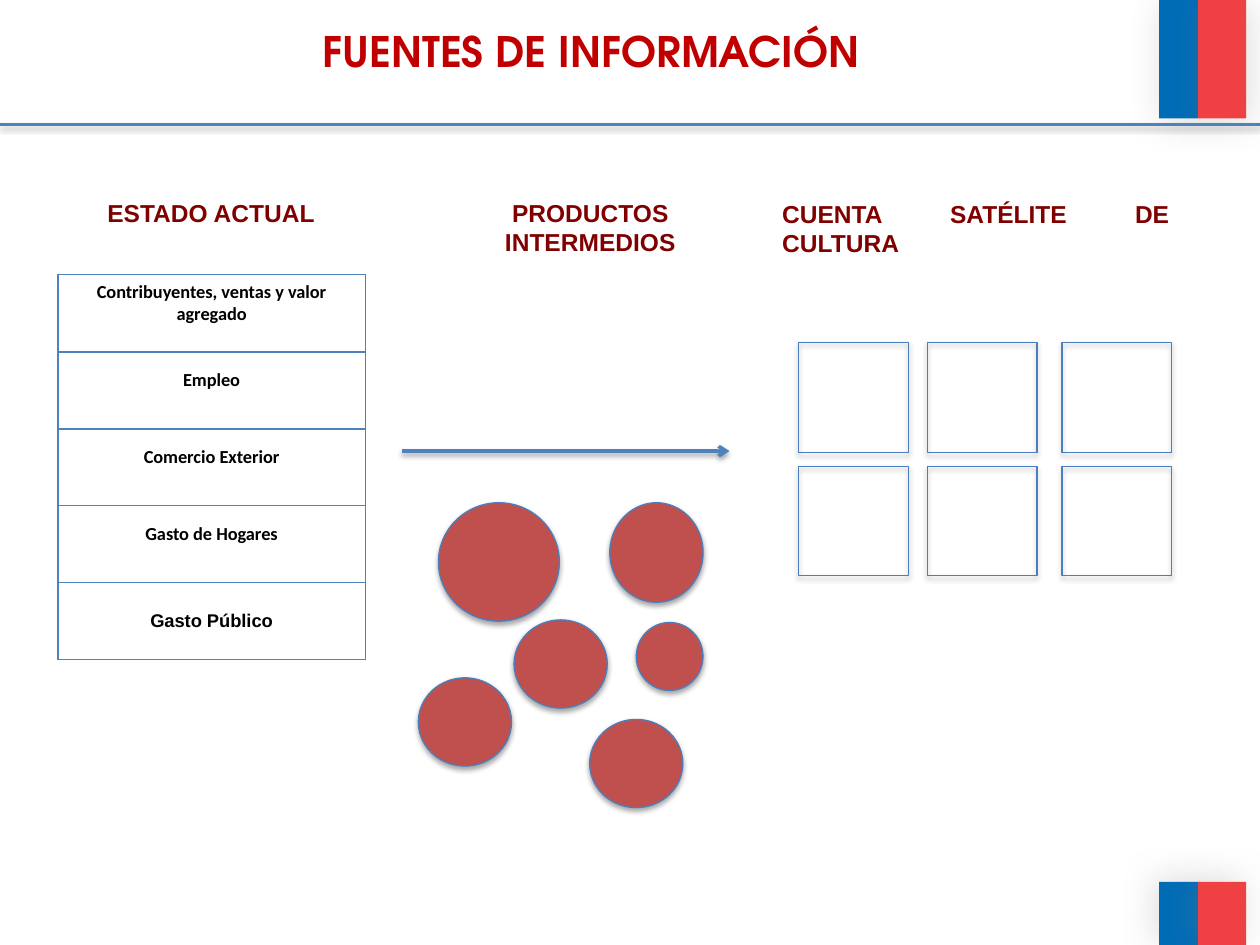
from lxml import etree
from pptx import Presentation
from pptx.dml.color import RGBColor
from pptx.enum.shapes import MSO_CONNECTOR, MSO_SHAPE
from pptx.enum.text import MSO_ANCHOR, PP_ALIGN
from pptx.oxml.ns import qn
from pptx.util import Inches, Pt

RECTANGLE, OVAL = MSO_SHAPE.RECTANGLE, MSO_SHAPE.OVAL
STRAIGHT = MSO_CONNECTOR.STRAIGHT
TOP, MIDDLE = MSO_ANCHOR.TOP, MSO_ANCHOR.MIDDLE
CENTER, JUSTIFY = PP_ALIGN.CENTER, PP_ALIGN.JUSTIFY

THEME = {
    "title": ("TeX Gyre Adventor", 24, "C00000"),
    "heading": ("Arial", 14, "800000"),
    "cell": ("Calibri", 10.5, "000000"),
    "last_cell": ("Arial", 10.5, "000000"),
    "blue_bar": "006CB7", "red_bar": "EF4144",
    "circle": "C0504D", "outline": "4B7EBC", "rule": "4F81BD",
}
SHAPE_SHADOW = ("000000", 35, 3.1, 1.8, 90)
ARROW_SHADOW = ("000000", 38, 3.1, 1.6, 90)
RULE_SHADOW = ("808080", 38, 3.1, 1.6, 90)

TITLE = ("FUENTES DE INFORMACIÓN", (0.75, 0.15, 7.88, 0.76))
HEADINGS = [
    ("ESTADO ACTUAL", (0.75, 1.52, 1.85, 0.34), CENTER),
    ("PRODUCTOS INTERMEDIOS", (3.66, 1.52, 2.05, 0.57), CENTER),
    ("CUENTA SATÉLITE DE CULTURA", (6.11, 1.53, 3.27, 0.34), JUSTIFY),
]
SOURCES = ["Contribuyentes, ventas y valor agregado", "Empleo",
           "Comercio Exterior", "Gasto de Hogares", "Gasto Público"]
TABLE_LEFT, TABLE_TOP, TABLE_WIDTH, ROW_HEIGHT = 0.46, 2.18, 2.44, 0.61
CIRCLES = [
    (3.48, 3.99, 0.96, 0.94), (4.84, 3.99, 0.74, 0.79),
    (5.05, 4.94, 0.53, 0.54), (4.08, 4.92, 0.74, 0.7),
    (4.68, 5.71, 0.74, 0.7), (3.32, 5.38, 0.74, 0.7),
]
SQUARE_COLUMNS, SQUARE_ROWS, SQUARE_SIDE = (6.34, 7.36, 8.43), (2.72, 3.7), 0.87
BAR_COLUMNS = [("blue_bar", 9.2, 0.31), ("red_bar", 9.51, 0.38)]
BAR_ROWS = [(0, 0.94, 45), (7, 0.5, 215)]


def inches(box):
    """Convert a sequence of numbers to lengths."""
    return [Inches(value) for value in box]


def add_shadow(shape, color, opacity, blur, distance, direction):
    """Give a shape or connector an outer shadow."""
    properties = shape._element.spPr
    for old in properties.findall(qn("a:effectLst")):
        properties.remove(old)
    effects = etree.SubElement(properties, qn("a:effectLst"))
    shadow = etree.SubElement(
        effects, qn("a:outerShdw"), blurRad=str(Pt(blur)), dist=str(Pt(distance)),
        dir=str(direction * 60000), rotWithShape="0")
    tint = etree.SubElement(shadow, qn("a:srgbClr"), val=color)
    etree.SubElement(tint, qn("a:alpha"), val=str(opacity * 1000))


def add_figure(slide, kind, box, shadow, fill=None, outline=None):
    """Add a preset shape with optional fill and outline."""
    shape = slide.shapes.add_shape(kind, *inches(box))
    if fill:
        shape.fill.solid()
        shape.fill.fore_color.rgb = RGBColor.from_string(THEME[fill])
    else:
        shape.fill.background()
    if outline:
        shape.line.color.rgb = RGBColor.from_string(THEME[outline])
        shape.line.width = Pt(0.75)
    else:
        shape.line.fill.background()
    add_shadow(shape, *shadow)


def add_line(slide, ends, shadow, arrow=False):
    """Add a straight rule or arrow."""
    line = slide.shapes.add_connector(STRAIGHT, *inches(ends))
    line.line.color.rgb = RGBColor.from_string(THEME["rule"])
    line.line.width = Pt(2)
    if arrow:
        etree.SubElement(line.line._get_or_add_ln(), qn("a:tailEnd"), type="arrow")
    add_shadow(line, *shadow)


def write(frame, text, style, alignment=CENTER):
    """Set one bold paragraph in a theme style."""
    frame.word_wrap = True
    paragraph = frame.paragraphs[0]
    paragraph.text = text
    paragraph.alignment = alignment
    name, size, color = THEME[style]
    paragraph.font.name, paragraph.font.size = name, Pt(size)
    paragraph.font.bold = True
    paragraph.font.color.rgb = RGBColor.from_string(color)


def add_border(cell):
    """Draw a thin line on all four sides of a cell."""
    properties = cell._tc.get_or_add_tcPr()
    for index, side in enumerate(("lnL", "lnR", "lnT", "lnB")):
        line = etree.Element(qn(f"a:{side}"), w=str(Pt(1)))
        fill = etree.SubElement(line, qn("a:solidFill"))
        etree.SubElement(fill, qn("a:srgbClr"), val=THEME["rule"])
        properties.insert(index, line)


def add_sources(slide):
    """Add the one-column table of current sources."""
    box = (TABLE_LEFT, TABLE_TOP, TABLE_WIDTH, ROW_HEIGHT * len(SOURCES))
    table = slide.shapes.add_table(len(SOURCES), 1, *inches(box)).table
    table.first_row = table.horz_banding = False
    for index, source in enumerate(SOURCES):
        last = index == len(SOURCES) - 1
        cell = table.cell(index, 0)
        cell.fill.background()
        cell.vertical_anchor = MIDDLE
        cell.margin_bottom = Inches(0.05 if last else 0.21)
        write(cell.text_frame, source, "last_cell" if last else "cell")
        add_border(cell)


def main():
    """Build and save the slide."""
    presentation = Presentation()
    presentation.slide_width, presentation.slide_height = inches((10, 7.5))
    slide = presentation.slides.add_slide(presentation.slide_layouts[5])

    text, box = TITLE
    title = slide.shapes.title
    title.left, title.top, title.width, title.height = inches(box)
    title.text_frame.vertical_anchor = TOP
    write(title.text_frame, text, "title")

    for top, height, direction in BAR_ROWS:
        for fill, left, width in BAR_COLUMNS:
            add_figure(slide, RECTANGLE, (left, top, width, height),
                       ("808080", 25, 20, 3, direction), fill)
    add_line(slide, (0, 0.99, 10, 0.99), RULE_SHADOW)
    add_sources(slide)
    add_line(slide, (3.19, 3.58, 5.79, 3.58), ARROW_SHADOW, arrow=True)
    for top in SQUARE_ROWS:
        for left in SQUARE_COLUMNS:
            add_figure(slide, RECTANGLE, (left, top, SQUARE_SIDE, SQUARE_SIDE),
                       SHAPE_SHADOW, outline="outline")
    for box in CIRCLES:
        add_figure(slide, OVAL, box, SHAPE_SHADOW, "circle", "outline")
    for text, box, alignment in HEADINGS:
        heading = slide.shapes.add_textbox(*inches(box))
        write(heading.text_frame, text, "heading", alignment)

    presentation.save("out.pptx")


if __name__ == "__main__":
    main()
